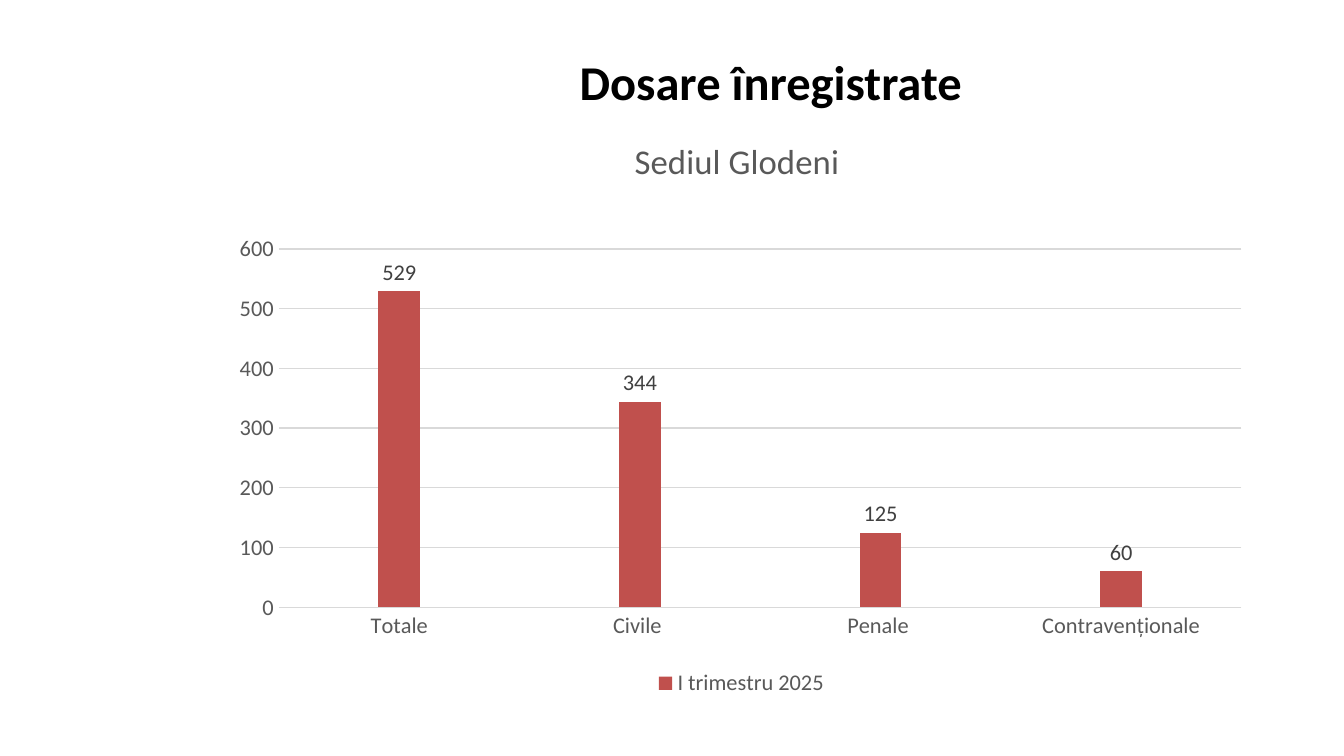
import pptx
import pptx.chart.data
import pptx.dml.color
import pptx.enum.chart
import pptx.enum.text
import pptx.oxml
import pptx.oxml.ns
import pptx.util

Pt = pptx.util.Pt
RGB = pptx.dml.color.RGBColor.from_string
theme = {
    "font": "Calibri",
    "colors": {"title": "000000", "muted": "595959", "label": "404040", "grid": "D9D9D9",
               "series": ["4F81BD", "C0504D", "9BBB59"]},
    "sizes": {"title": 26, "subtitle": 18.6, "chart": 12},
}
chart_width, chart_height = 571, 319


def style_font(font, size, color, bold=False):
    values = {"name": theme["font"], "size": Pt(theme["sizes"][size]), "bold": bold}
    for attribute, value in values.items():
        setattr(font, attribute, value)
    font.color.rgb = RGB(theme["colors"][color])


def place_part(element, index, **places):
    """Place a chart part by points from the corner of the chart."""
    for old in element.findall(pptx.oxml.ns.qn("c:layout")):
        element.remove(old)
    target = '<c:layoutTarget val="inner"/>' if "w" in places else ""
    modes = "".join(f'<c:{key}Mode val="edge"/>' for key in places if key in "xy")
    values = "".join(
        f'<c:{key} val="{value / (chart_width if key in "xw" else chart_height)}"/>'
        for key, value in places.items())
    element.insert(index, pptx.oxml.parse_xml(
        f'<c:layout {pptx.oxml.ns.nsdecls("c")}><c:manualLayout>'
        f"{target}{modes}{values}</c:manualLayout></c:layout>"))


presentation = pptx.Presentation()
presentation.slide_width, presentation.slide_height = Pt(720), Pt(405)
slide = presentation.slides.add_slide(presentation.slide_layouts[5])

# Slide title
heading = slide.shapes.title
for attribute, value in {"left": 142, "top": 24, "width": 542, "height": 39}.items():
    setattr(heading, attribute, Pt(value))
heading.text_frame.text = "Dosare înregistrate"
heading.text_frame.vertical_anchor = pptx.enum.text.MSO_ANCHOR.MIDDLE
heading_line = heading.text_frame.paragraphs[0]
heading_line.alignment = pptx.enum.text.PP_ALIGN.CENTER
style_font(heading_line.runs[0].font, "title", "title", bold=True)

# Registered cases by type; only the middle series has values
cases = pptx.chart.data.CategoryChartData()
cases.categories = ["Totale", "Civile ", "Penale ", "Contravenționale"]
cases.add_series("Series 1", [None] * 4)
cases.add_series("I trimestru 2025", [529, 344, 125, 60])
cases.add_series("Series 3", [None] * 4)
chart = slide.shapes.add_chart(
    pptx.enum.chart.XL_CHART_TYPE.COLUMN_CLUSTERED,
    Pt(113), Pt(62.6), Pt(chart_width), Pt(chart_height), cases).chart
style_font(chart.font, "chart", "muted")

# Chart title and plot area
chart.has_title = True
chart.chart_title.text_frame.text = "Sediul Glodeni"
style_font(chart.chart_title.text_frame.paragraphs[0].runs[0].font, "subtitle", "muted")
chart.chart_title.include_in_layout = False
place_part(chart.chart_title._element, 1, x=223.6, y=7.4)
place_part(chart._chartSpace.chart.plotArea, 0, x=36.5, y=70.8, w=515.6, h=192)

# Columns and value labels
plot = chart.plots[0]
for attribute, value in {"gap_width": 219, "overlap": -27, "vary_by_categories": False,
                         "has_data_labels": True}.items():
    setattr(plot, attribute, value)
for series, color in zip(plot.series, theme["colors"]["series"]):
    series.format.fill.solid()
    series.format.fill.fore_color.rgb = RGB(color)
plot.data_labels.show_value = True
plot.data_labels.position = pptx.enum.chart.XL_LABEL_POSITION.OUTSIDE_END
style_font(plot.data_labels.font, "chart", "label")

# Axes and gridlines
for axis in (chart.category_axis, chart.value_axis):
    axis.major_tick_mark = axis.minor_tick_mark = pptx.enum.chart.XL_TICK_MARK.NONE
    style_font(axis.tick_labels.font, "chart", "muted")
for attribute, value in {"minimum_scale": 0, "maximum_scale": 600, "major_unit": 100,
                         "has_major_gridlines": True}.items():
    setattr(chart.value_axis, attribute, value)
chart.value_axis.format.line.fill.background()
for line in (chart.category_axis.format.line, chart.value_axis.major_gridlines.format.line):
    line.width = Pt(0.75)
    line.color.rgb = RGB(theme["colors"]["grid"])

# Legend, without entries for the empty series
chart.has_legend = True
legend = chart.legend
legend.position = pptx.enum.chart.XL_LEGEND_POSITION.BOTTOM
legend.include_in_layout = False
style_font(legend.font, "chart", "muted")
place_part(legend._element, 1, x=236, y=293.5)
for position, empty_series in enumerate((0, 2), start=1):
    legend._element.insert(position, pptx.oxml.parse_xml(
        f'<c:legendEntry {pptx.oxml.ns.nsdecls("c")}><c:idx val="{empty_series}"/>'
        '<c:delete val="1"/></c:legendEntry>'))

presentation.save("out.pptx")
